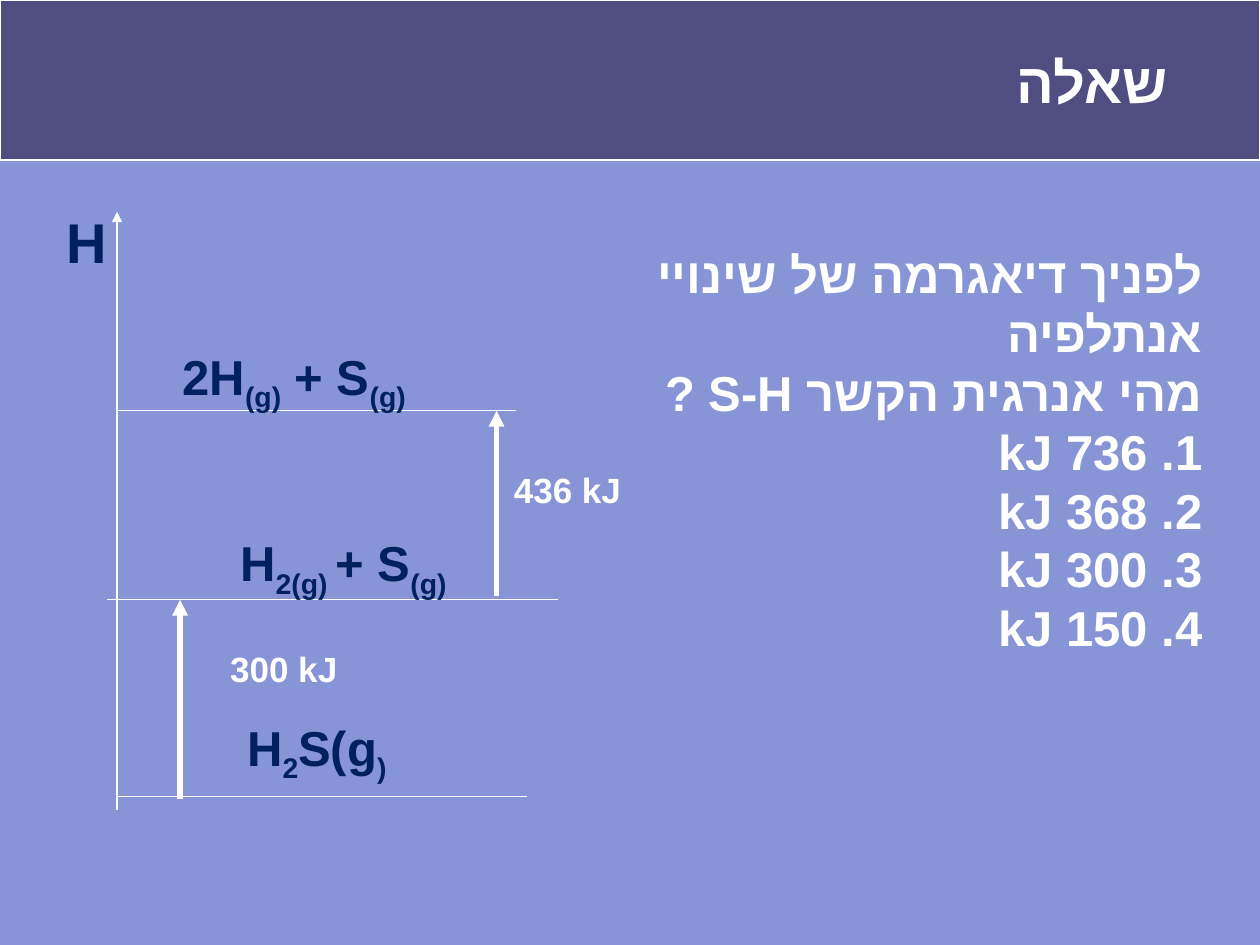
from lxml.etree import SubElement
from pptx import Presentation
from pptx.dml.color import RGBColor
from pptx.enum.shapes import MSO_CONNECTOR, MSO_SHAPE
from pptx.enum.text import MSO_ANCHOR, MSO_AUTO_SIZE, PP_ALIGN
from pptx.oxml.ns import qn
from pptx.util import Cm, Pt

WHITE = RGBColor(0xFF, 0xFF, 0xFF)
NAVY = RGBColor(0x00, 0x20, 0x60)
PURPLE = RGBColor(0x50, 0x4D, 0x80)
PERIWINKLE = RGBColor(0x87, 0x94, 0xD5)

FONT = "Arial"
SUBSCRIPT = "-25000"

# Heights of the three enthalpy levels and the position of the axis, in cm
ATOMS_LEVEL, ELEMENTS_LEVEL, COMPOUND_LEVEL = 8.28, 12.09, 16.05
AXIS_LEFT = 2.36

QUESTION = ["לפניך דיאגרמה של שינויי אנתלפיה", "מהי אנרגית הקשר S-H ?"]
ANSWERS = [736, 368, 300, 150]


def set_attributes(target, values):
    for name, value in values.items():
        setattr(target, name, value)


def place(shape, left, top, width, height):
    set_attributes(shape, {"left": Cm(left), "top": Cm(top),
                           "width": Cm(width), "height": Cm(height)})


def add_run(paragraph, text, size, color, subscript=False):
    run = paragraph.add_run()
    run.text = text
    set_attributes(run.font, {"name": FONT, "size": Pt(size), "bold": True})
    run.font.color.rgb = color
    properties = run.font._element
    SubElement(properties, qn("a:cs"), typeface=FONT)
    if subscript:
        properties.set("baseline", SUBSCRIPT)


def fill_hebrew(placeholder, box, lines, size):
    """Write right-to-left paragraphs without bullets into a placeholder."""
    place(placeholder, *box)
    frame = placeholder.text_frame
    set_attributes(frame, {"word_wrap": True, "auto_size": MSO_AUTO_SIZE.NONE,
                           "vertical_anchor": MSO_ANCHOR.MIDDLE})
    for index, line in enumerate(lines):
        paragraph = frame.add_paragraph() if index else frame.paragraphs[0]
        set_attributes(paragraph, {"alignment": PP_ALIGN.RIGHT,
                                   "space_before": Pt(0)})
        properties = paragraph._p.get_or_add_pPr()
        for name, value in {"rtl": "1", "marL": "0", "indent": "0"}.items():
            properties.set(name, value)
        SubElement(properties, qn("a:buNone"))
        add_run(paragraph, line, size, WHITE)


def add_banner(slide, width):
    banner = slide.shapes.add_shape(MSO_SHAPE.RECTANGLE, 0, 0, width, Cm(3.23))
    banner.shadow.inherit = False
    banner.fill.solid()
    banner.fill.fore_color.rgb = PURPLE
    banner.line.color.rgb = WHITE
    banner.line.width = Pt(0.75)
    # Send the banner behind the title
    slide.shapes.title.element.addprevious(banner.element)


def add_label(slide, box, runs, size, color, alignment=PP_ALIGN.LEFT):
    """Add a text box; runs are pairs of text and subscript flag."""
    label = slide.shapes.add_textbox(*map(Cm, box))
    frame = label.text_frame
    set_attributes(frame, {"word_wrap": True,
                           "auto_size": MSO_AUTO_SIZE.SHAPE_TO_FIT_TEXT})
    paragraph = frame.paragraphs[0]
    paragraph.alignment = alignment
    for text, subscript in runs:
        add_run(paragraph, text, size, color, subscript)


def add_line(group, start, end, width=0.75, arrow=False):
    line = group.shapes.add_connector(MSO_CONNECTOR.STRAIGHT,
                                      *map(Cm, start + end))
    line.line.color.rgb = WHITE
    line.line.width = Pt(width)
    if arrow:
        SubElement(line.line._get_or_add_ln(), qn("a:tailEnd"), type="triangle")
    SubElement(line.element.spPr, qn("a:effectLst"))


def add_diagram_lines(slide):
    group = slide.shapes.add_group_shape()
    # Enthalpy axis
    add_line(group, (AXIS_LEFT, 16.33), (AXIS_LEFT, 4.27), arrow=True)
    # Energy levels
    for left, right, level in [(2.16, 11.25, ELEMENTS_LEVEL),
                               (AXIS_LEFT, 10.41, ATOMS_LEVEL),
                               (AXIS_LEFT, 10.62, COMPOUND_LEVEL)]:
        add_line(group, (left, level), (right, level))
    # Enthalpy changes
    for x, bottom, top in [(10.01, 12.01, ATOMS_LEVEL),
                           (3.63, 16.1, ELEMENTS_LEVEL)]:
        add_line(group, (x, bottom), (x, top), width=3, arrow=True)


def add_diagram_labels(slide):
    # Substances on each level
    add_label(slide, (3.43, 10.62, 6.99, 1.45),
              [("H", False), ("2(g) ", True), ("+ S", False), ("(g)", True)],
              28, NAVY, PP_ALIGN.CENTER)
    add_label(slide, (3.43, 6.86, 7.98, 1.45),
              [("2H", False), ("(g)", True), (" + S", False), ("(g)", True)],
              28, NAVY)
    add_label(slide, (3, 14.33, 6.78, 1.45),
              [("H", False), ("2", True), ("S(g", False), (")", True)],
              28, NAVY, PP_ALIGN.CENTER)
    # Axis name and energy values
    add_label(slide, (1.09, 4.06, 1.47, 1.6), [("H", False)], 32, NAVY)
    for text, left, top in [("300 kJ", 4.39, 12.93), ("436 kJ", 10.11, 9.32)]:
        add_label(slide, (left, top, 4.39, 1.09), [(text, False)], 20, WHITE)


def main():
    presentation = Presentation()
    set_attributes(presentation, {"slide_width": Cm(25.4),
                                  "slide_height": Cm(19.05)})
    slide = presentation.slides.add_slide(presentation.slide_layouts[1])
    slide.background.fill.solid()
    slide.background.fill.fore_color.rgb = PERIWINKLE

    # Title and question
    add_banner(slide, presentation.slide_width)
    fill_hebrew(slide.shapes.title, (1.27, 0.53, 22.53, 2.21), ["שאלה"], 32)
    answers = [f"{number}. {energy} kJ"
               for number, energy in enumerate(ANSWERS, start=1)]
    fill_hebrew(slide.placeholders[1], (9.5, 3.33, 14.99, 11.51),
                QUESTION + answers, 28)

    # Enthalpy diagram
    add_diagram_lines(slide)
    add_diagram_labels(slide)

    presentation.save("out.pptx")


if __name__ == "__main__":
    main()
